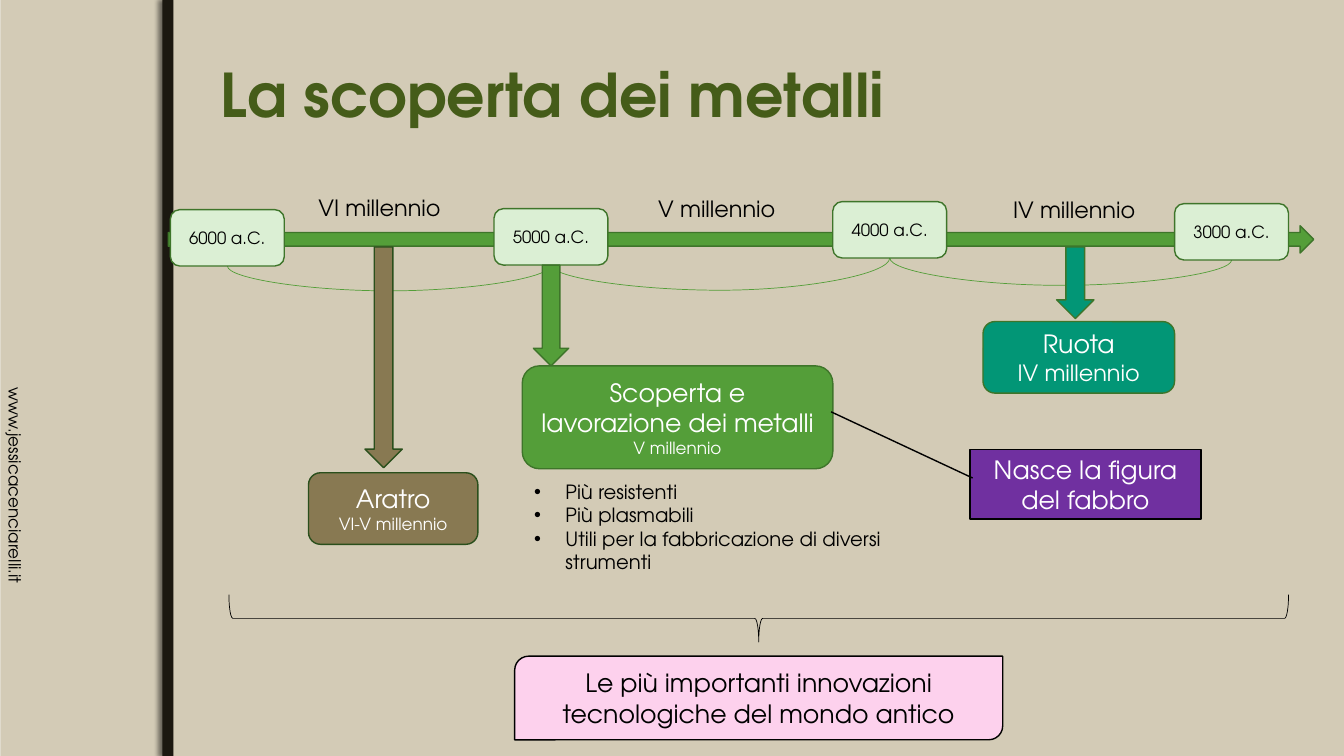
from pptx import Presentation
from pptx.dml.color import RGBColor
from pptx.enum.shapes import MSO_CONNECTOR as Link, MSO_SHAPE as Kind
from pptx.enum.text import MSO_ANCHOR as Anchor, PP_ALIGN as Align
from pptx.oxml import parse_xml
from pptx.oxml.ns import nsdecls
from pptx.util import Inches, Pt

FACE = "TeX Gyre Adventor"
BLACK, WHITE = "000000", "FFFFFF"
GREEN, EDGE, PALE = "549E39", "3E752A", "DBEFD4"
TAN, TEAL = "887952", "029676"
DIP = 0.25


def color(code):
    return RGBColor.from_string(code)


def node(tag, inner="", attrs=""):
    return parse_xml(f"<a:{tag} {nsdecls('a')} {attrs}>{inner}</a:{tag}>")


def write(shape, lines, tone=BLACK, align=Align.LEFT, anchor=Anchor.TOP,
          bold=False, bullet=False):
    """Fill a shape with (text, size) paragraphs."""
    frame = shape.text_frame
    frame.word_wrap = True
    frame.vertical_anchor = anchor
    for i, (text, size) in enumerate(lines):
        para = frame.add_paragraph() if i else frame.paragraphs[0]
        para.alignment = align
        run = para.add_run()
        run.text = text
        if bullet:
            props = para._p.get_or_add_pPr()
            props.set("marL", str(Inches(0.31)))
            props.set("indent", str(Inches(-0.31)))
            props.append(node("buFont", attrs='typeface="Arial"'))
            props.append(node("buChar", attrs='char="•"'))
        style = {"name": FACE, "size": Pt(size), "bold": bold}
        for key, value in style.items():
            setattr(run.font, key, value)
        run.font.color.rgb = color(tone)


def label(slide, box, lines, **style):
    shape = slide.shapes.add_textbox(*map(Inches, box))
    write(shape, lines, **style)
    return shape


def draw(slide, kind, box, fill=None, edge=None, width=1, lines=(), tone=BLACK):
    shape = slide.shapes.add_shape(kind, *map(Inches, box))
    shape.shadow.inherit = False
    if fill:
        shape.fill.solid()
        shape.fill.fore_color.rgb = color(fill)
    else:
        shape.fill.background()
    if edge:
        shape.line.color.rgb = color(edge)
        shape.line.width = Pt(width)
    else:
        shape.line.fill.background()
    if lines:
        write(shape, lines, tone, Align.CENTER, Anchor.MIDDLE)
    return shape


def arc(slide, start, end):
    """Hang a curve between two points, DIP below the lower one."""
    (x1, y1), (x2, y2) = start, end
    wide, tall = abs(y2 - y1), x2 - x1
    left, top = (x1 + x2 - wide) / 2, (y1 + y2 - tall) / 2
    line = slide.shapes.add_connector(
        Link.CURVE, *map(Inches, (left, top, left + wide, top + tall)))
    line.line.color.rgb = color(GREEN)
    line.line.width = Pt(0.5)
    props = line._element.spPr
    props.append(node("effectLst"))
    rise = y2 < y1
    turn = {"rot": "5400000", "flipH": "1", "flipV": "1"} if rise else {
        "rot": "16200000", "flipH": "1"}
    for key, value in turn.items():
        props.xfrm.set(key, value)
    bend = -DIP / wide if rise else (DIP + wide) / wide
    guide = node("gd", attrs=f'name="adj1" fmla="val {round(bend * 100000)}"')
    props.prstGeom.get_or_add_avLst().append(guide)


def side(slide, box):
    """Draw the backdrop, the dark bar and the upright web address."""
    x, y, w, h = box
    draw(slide, Kind.RECTANGLE, (x + 0.01, y, w - 0.01, h), "D3CBB6")
    bar = draw(slide, Kind.RECTANGLE, (x + 1.61, y, 0.11, h), "1B1810")
    glow = '<a:srgbClr val="000000"><a:alpha val="50000"/></a:srgbClr>'
    shade = node("outerShdw", glow,
                 f'blurRad="{Pt(3)}" dist="{Pt(3)}" dir="10800000" rotWithShape="0"')
    bar._element.spPr.find(shade.tag.replace("outerShdw", "effectLst")).append(shade)
    site = label(slide, (x - 0.99, y + 4.74, 2.28, 0.3),
                 [("www.jessicacenciarelli.it", 12)])
    site.rotation = 90


def axis(slide, box):
    """Draw the time arrow with its dates, ages and arcs."""
    x, y, w, h = box
    draw(slide, Kind.RIGHT_ARROW, box, GREEN, EDGE)
    wide, tall = 1.13, 0.56
    dates = [("6000 a.C.", 0.02, -0.16), ("5000 a.C.", 3.23, -0.17),
             ("4000 a.C.", 6.59, -0.24), ("3000 a.C.", 9.98, -0.22)]
    ends = [(x + dx + wide / 2, y + dy + tall) for _, dx, dy in dates]
    for start, end in zip(ends, ends[1:]):
        arc(slide, start, end)
    for text, dx, dy in dates:
        draw(slide, Kind.ROUNDED_RECTANGLE, (x + dx, y + dy, wide, tall),
             PALE, EDGE, lines=[(text, 12)])
    ages = [("VI millennio", 1.39, -0.36), ("V millennio", 4.76, -0.35),
            ("IV millennio", 8.28, -0.34)]
    for text, dx, dy in ages:
        label(slide, (x + dx, y + dy, 1.95, 0.37), [(text, 16)])


def event(slide, box, arrow, fill, edge, lines):
    """Draw an event card and the arrow (x offset, top, width, height) to it."""
    dx, top, wide, tall = arrow
    draw(slide, Kind.DOWN_ARROW, (box[0] + dx, top, wide, tall), fill, edge)
    draw(slide, Kind.ROUNDED_RECTANGLE, box, fill, edge, lines=lines, tone=WHITE)


def smith(slide, box):
    note = draw(slide, Kind.LINE_CALLOUT_1, box, "7030A0", BLACK,
                lines=[("Nasce la figura del fabbro", 18)], tone=WHITE)
    for i, value in enumerate((0.41, 0.012, -0.542, -0.601)):
        note.adjustments[i] = value


def total(slide, box):
    """Draw the brace and the summary card under it."""
    x, y, w, h = box
    deep = 0.47
    brace = draw(slide, Kind.RIGHT_BRACE,
                 (x + (w - deep) / 2, y + (deep - w) / 2, deep, w),
                 edge=BLACK, width=0.5)
    brace.rotation = 90
    wide, tall = 4.84, 0.83
    text = "Le più importanti innovazioni tecnologiche del mondo antico"
    draw(slide, Kind.ROUND_2_DIAG_RECTANGLE,
         (x + (w - wide) / 2, y + h - tall, wide, tall),
         "FDD1ED", BLACK, lines=[(text, 18)])


def main():
    deck = Presentation()
    deck.slide_width, deck.slide_height = Inches(13.33), Inches(7.5)
    slide = deck.slides.add_slide(deck.slide_layouts[6])
    slide.background.fill.solid()
    slide.background.fill.fore_color.rgb = color("E3DED1")

    side(slide, (0, 0, 13.33, 7.5))
    label(slide, (2.09, 0.3, 10.93, 1.25), [("La scoperta dei metalli", 43)],
          tone="455C19", anchor=Anchor.MIDDLE, bold=True)
    axis(slide, (1.67, 2.24, 11.36, 0.27))
    event(slide, (5.18, 3.63, 3.08, 1.02), (0.11, 2.63, 0.35, 1), GREEN, EDGE,
          [("Scoperta e lavorazione dei metalli", 18), ("V millennio", 12)])
    event(slide, (3.06, 4.69, 1.68, 0.71), (0.56, 2.45, 0.37, 2.19), TAN, "2A4F1C",
          [("Aratro", 18), ("VI-V millennio", 12)])
    event(slide, (9.75, 3.19, 1.9, 0.71), (0.73, 2.45, 0.37, 0.71), TEAL, EDGE,
          [("Ruota", 18), ("IV millennio", 16)])
    gains = ["Più resistenti", "Più plasmabili",
             "Utili per la fabbricazione di diversi strumenti"]
    label(slide, (5.2, 4.71, 3.73, 1.04), [(text, 14) for text in gains], bullet=True)
    total(slide, (2.27, 5.9, 10.51, 1.44))
    smith(slide, (9.62, 4.46, 2.29, 0.69))
    deck.save("out.pptx")


if __name__ == "__main__":
    main()
